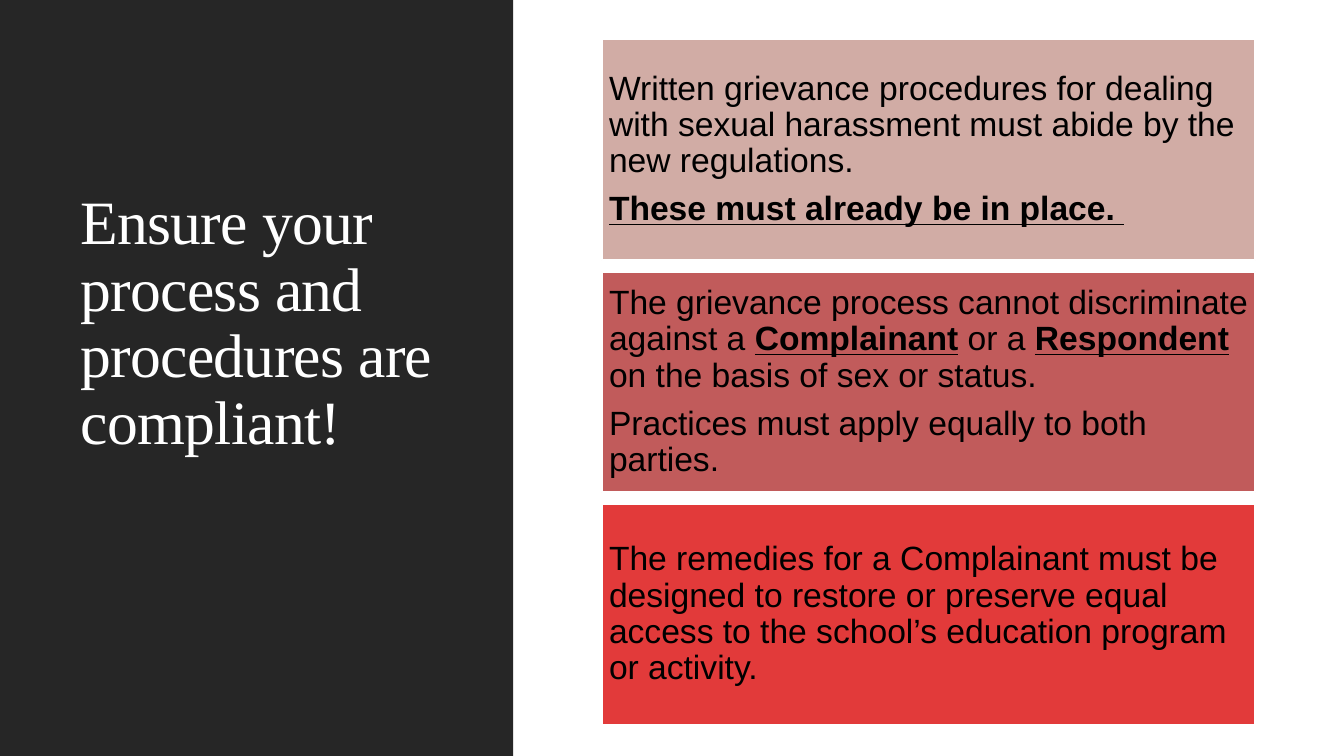
from dataclasses import dataclass

from pptx import Presentation
from pptx.dml.color import RGBColor
from pptx.enum.shapes import MSO_SHAPE as Shape
from pptx.enum.text import MSO_ANCHOR as Anchor, PP_ALIGN as Align
from pptx.util import Inches, Pt


@dataclass(frozen=True)
class Theme:
    panel: str = "262626"
    white: str = "FFFFFF"
    black: str = "000000"
    card_fills: tuple = ("D1ACA5", "C15B5B", "E23A3A")
    title_font: str = "Times New Roman"
    body_font: str = "Arial"
    title_size: int = 44
    body_size: int = 24


THEME = Theme()
STRONG = {"bold": True, "underline": True}
PLAIN = {}

TITLE = "Ensure your process and procedures are compliant!"
CARDS = [
    [
        [("Written grievance procedures for dealing with sexual harassment "
          "must abide by the new regulations.", PLAIN)],
        [("These must already be in place. ", STRONG)],
    ],
    [
        [("The grievance process cannot discriminate against a ", PLAIN),
         ("Complainant", STRONG),
         (" or a ", PLAIN),
         ("Respondent", STRONG),
         (" on the basis of sex or status.", PLAIN)],
        [("Practices must apply equally to both parties.", PLAIN)],
    ],
    [
        [("The remedies for a Complainant must be designed to restore or "
          "preserve equal access to the school’s education program or "
          "activity.", PLAIN)],
    ],
]
CARD_LEFT, CARD_TOP, CARD_WIDTH, CARD_HEIGHT = 5.97, 0.39, 6.48, 2.19
CARD_PITCH = 2.305
CARD_INSET = Inches(0.07)


def set_format(target, values):
    for name, value in values.items():
        setattr(target, name, value)


def add_span(para, text, font, size, color, extra):
    span = para.add_run()
    span.text = text
    set_format(span.font, {"name": font, "size": Pt(size), **extra})
    span.font.color.rgb = RGBColor.from_string(color)
    return span


def add_block(page, left, top, width, height, fill):
    block = page.shapes.add_shape(
        Shape.RECTANGLE, Inches(left), Inches(top), Inches(width), Inches(height))
    block.shadow.inherit = False
    block.fill.solid()
    block.fill.fore_color.rgb = RGBColor.from_string(fill)
    block.line.fill.background()
    return block


def add_title(page):
    box = page.shapes.add_textbox(
        Inches(0.7), Inches(0.86), Inches(3.85), Inches(3.73))
    set_format(box.text_frame, {"word_wrap": True, "vertical_anchor": Anchor.BOTTOM})
    para = box.text_frame.paragraphs[0]
    para.line_spacing = 0.9
    span = add_span(para, TITLE, THEME.title_font, THEME.title_size, THEME.white, PLAIN)
    span.font._element.set("spc", "-50")


def add_card(page, top, fill, paragraphs):
    card = add_block(page, CARD_LEFT, top, CARD_WIDTH, CARD_HEIGHT, fill)
    card.line.color.rgb = RGBColor.from_string(THEME.white)
    card.line.width = Pt(1.25)
    frame = card.text_frame
    set_format(frame, {
        "word_wrap": True, "vertical_anchor": Anchor.MIDDLE,
        "margin_left": CARD_INSET, "margin_right": CARD_INSET,
        "margin_top": CARD_INSET, "margin_bottom": CARD_INSET,
    })
    for index, spans in enumerate(paragraphs):
        para = frame.add_paragraph() if index else frame.paragraphs[0]
        set_format(para, {
            "alignment": Align.LEFT, "line_spacing": 0.9,
            "space_after": Pt(0.35 * THEME.body_size),
        })
        for text, extra in spans:
            add_span(para, text, THEME.body_font, THEME.body_size, THEME.black, extra)


def main():
    deck = Presentation()
    set_format(deck, {"slide_width": Inches(13.33), "slide_height": Inches(7.5)})
    page = deck.slides.add_slide(deck.slide_layouts[6])
    add_block(page, 0, 0, 5.09, 7.5, THEME.panel)
    add_title(page)
    for index, (fill, paragraphs) in enumerate(zip(THEME.card_fills, CARDS)):
        add_card(page, CARD_TOP + index * CARD_PITCH, fill, paragraphs)
    deck.save("out.pptx")


if __name__ == "__main__":
    main()
